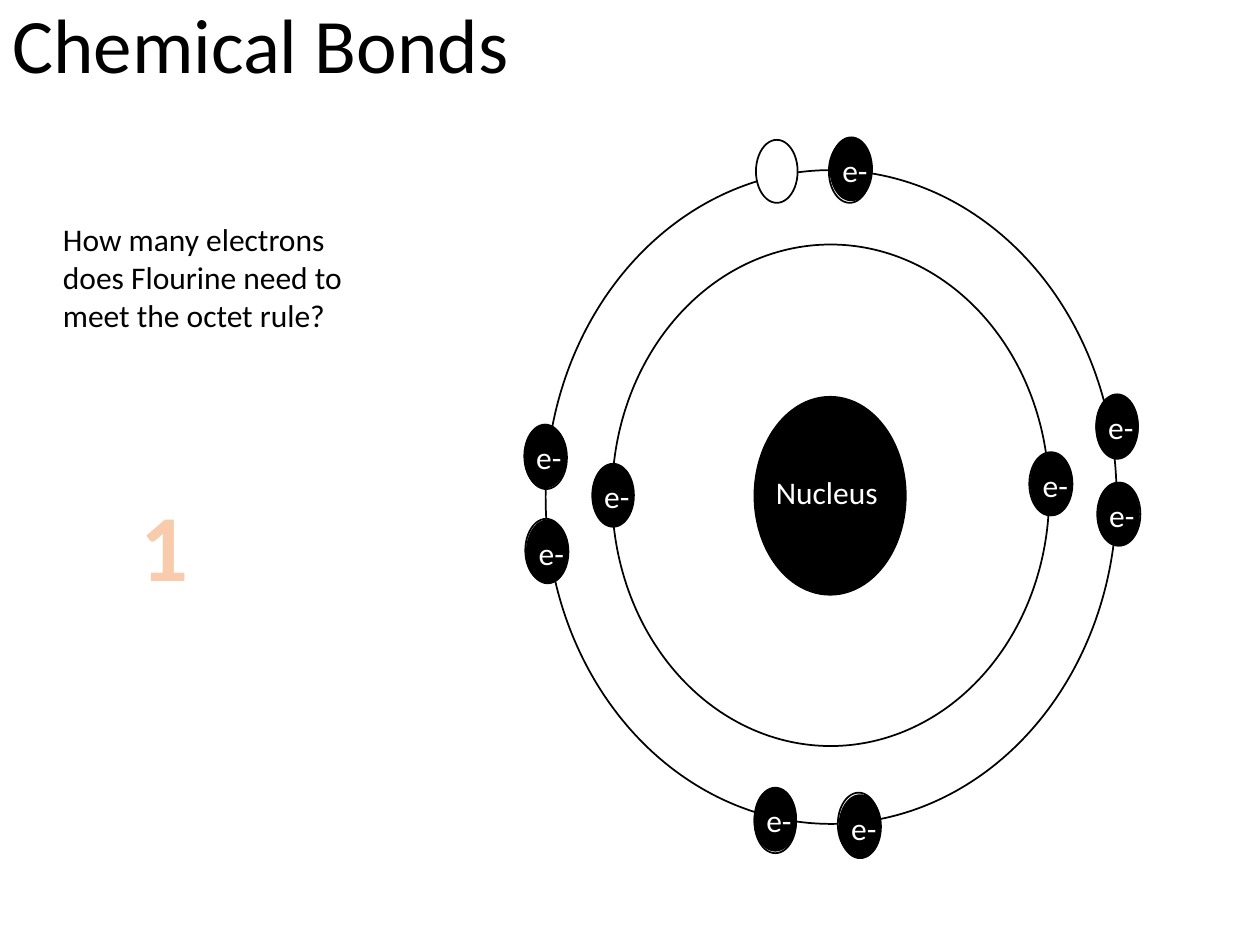
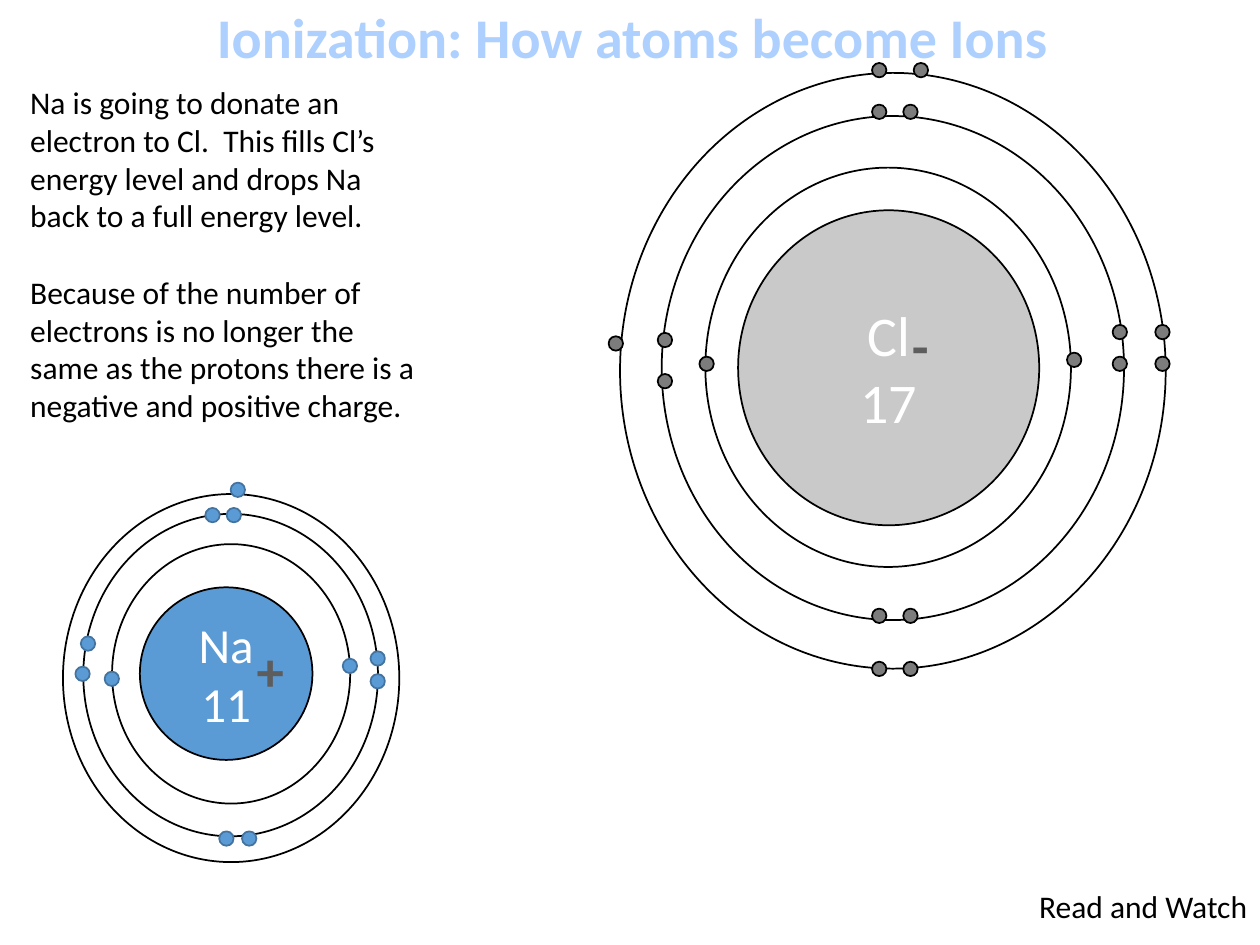
from dataclasses import dataclass

from pptx import Presentation
from pptx.dml.color import RGBColor
from pptx.enum.shapes import MSO_SHAPE
from pptx.enum.text import MSO_ANCHOR, PP_ALIGN
from pptx.util import Cm, Pt

BLACK = RGBColor(0x00, 0x00, 0x00)
WHITE = RGBColor(0xFF, 0xFF, 0xFF)
PEACH = RGBColor(0xF8, 0xCB, 0xAD)
PALE_BLUE = RGBColor(0xAD, 0xD0, 0xFF)
BLUE = RGBColor(0x5B, 0x9B, 0xD5)
DARK_BLUE = RGBColor(0x43, 0x73, 0x9E)
LIGHT_GREY = RGBColor(0xC9, 0xC9, 0xC9)
GREY = RGBColor(0x7C, 0x7C, 0x7C)
DARK_GREY = RGBColor(0x5D, 0x5D, 0x5D)

OVAL = MSO_SHAPE.OVAL
MIDDLE, TOP = MSO_ANCHOR.MIDDLE, MSO_ANCHOR.TOP
LEFT, CENTER = PP_ALIGN.LEFT, PP_ALIGN.CENTER
FONT = "Calibri"

Point = tuple[float, float]


@dataclass(frozen=True)
class Box:
    """Left, top, width and height in centimetres."""
    left: float
    top: float
    width: float
    height: float

    def lengths(self) -> list[Cm]:
        return [Cm(v) for v in (self.left, self.top, self.width, self.height)]


@dataclass(frozen=True)
class Style:
    size: int = 18
    color: RGBColor = BLACK
    bold: bool = False
    align: PP_ALIGN = LEFT
    anchor: MSO_ANCHOR = TOP
    wrap: bool = True
    line_spacing: float = 1.0
    paragraph_gap: int = 0
    baseline: int = 0


@dataclass(frozen=True)
class Ion:
    symbol: str
    protons: int
    charge: str
    text_size: int
    nucleus: Box
    nucleus_fill: RGBColor
    shells: list[Box]
    electrons: list[Point]
    electron_fill: RGBColor
    electron_line: RGBColor
    charge_box: Box


BODY = Style()
LABEL = Style(color=WHITE)
TITLE = Style(size=44, anchor=MIDDLE, line_spacing=0.9)
ANSWER = Style(size=54, color=PEACH, bold=True, align=CENTER, wrap=False)
ION_TITLE = Style(size=32, color=PALE_BLUE, bold=True, align=CENTER)
CHARGE = Style(size=54, color=DARK_GREY, bold=True, align=CENTER, baseline=-25000)

# Fluorine atom
FLUORINE_NUCLEUS = Box(15.21, 8, 3.05, 3.99)
FLUORINE_SHELLS = [Box(12.34, 4.93, 8.81, 10.11), Box(11, 3.43, 11.51, 13.18)]
ELECTRON_WIDTH, ELECTRON_HEIGHT = 0.84, 1.27
SLOTS = [(20.75, 9.12), (10.59, 8.59), (15.21, 15.93), (16.89, 15.98), (10.59, 10.46),
         (15.24, 2.82), (16.71, 2.82), (22.1, 7.98), (22.15, 9.73)]
FLUORINE_ELECTRONS = [(11.94, 9.35), (20.78, 9.12), (10.57, 8.56), (16.74, 2.77),
                      (22.1, 7.95), (16.92, 16.03), (10.62, 10.49), (15.21, 15.88),
                      (22.12, 9.73)]

# Sodium and chlorine ions
ION_ELECTRON = 0.29
SODIUM = Ion(
    "Na", 11, "+", 28, Box(2.82, 11.84, 3.48, 3.48), BLUE,
    [Box(2.26, 10.97, 4.8, 5.23), Box(1.68, 10.36, 5.94, 6.5), Box(1.27, 9.96, 6.78, 7.42)],
    [(6.91, 13.28), (2.11, 13.54),
     (4.14, 10.24), (4.57, 10.24), (7.47, 13.13), (7.47, 13.59),
     (4.88, 16.76), (4.42, 16.76), (1.63, 12.83), (1.52, 13.44),
     (4.65, 9.73)],
    BLUE, DARK_BLUE, Box(4.88, 11.43, 1.14, 1.8))
CHLORINE = Ion(
    "Cl", 17, "-", 32, Box(14.88, 4.24, 6.07, 6.35), LIGHT_GREY,
    [Box(14.22, 3.38, 7.37, 8.05), Box(13.34, 2.34, 9.32, 10.16), Box(12.5, 1.47, 11, 12.01)],
    [(14.1, 7.19), (21.51, 7.11),
     (17.58, 2.11), (18.21, 2.11), (13.26, 6.71), (13.26, 7.54),
     (17.58, 12.27), (18.21, 12.27), (22.43, 6.55), (22.43, 7.19),
     (17.58, 1.27), (18.42, 1.27), (23.29, 6.55), (23.29, 7.19),
     (18.21, 13.34), (17.58, 13.34), (12.27, 6.78)],
    GREY, BLACK, Box(17.98, 4.88, 1.14, 1.8))


def write(frame, lines: list[str], style: Style) -> None:
    frame.text = "\n".join(lines)
    frame.word_wrap = style.wrap
    frame.vertical_anchor = style.anchor
    for index, paragraph in enumerate(frame.paragraphs):
        paragraph.alignment = style.align
        paragraph.line_spacing = style.line_spacing
        if index and style.paragraph_gap:
            paragraph.space_before = Pt(style.paragraph_gap)
        for run in paragraph.runs:
            run.font.name = FONT
            run.font.size = Pt(style.size)
            run.font.bold = style.bold
            run.font.color.rgb = style.color
            if style.baseline:
                run.font._element.set("baseline", str(style.baseline))


def add_text(shapes, box: Box, lines: list[str], style: Style = BODY) -> None:
    write(shapes.add_textbox(*box.lengths()).text_frame, lines, style)


def add_oval(shapes, box: Box, fill: RGBColor | None = None, line: RGBColor = BLACK):
    oval = shapes.add_shape(OVAL, *box.lengths())
    oval.shadow.inherit = False
    if fill is None:
        oval.fill.background()
    else:
        oval.fill.solid()
        oval.fill.fore_color.rgb = fill
    oval.line.color.rgb = line
    oval.line.width = Pt(1)
    return oval


def add_labelled_electron(shapes, left: float, top: float) -> None:
    electron = shapes.add_group_shape().shapes
    add_oval(electron, Box(left, top, ELECTRON_WIDTH, ELECTRON_HEIGHT), BLACK)
    add_text(electron, Box(left - 0.01, top + 0.15, 1.45, 1.02), ["e-"], LABEL)


def add_ion(shapes, ion: Ion) -> None:
    nucleus = add_oval(shapes, ion.nucleus, ion.nucleus_fill)
    write(nucleus.text_frame, [ion.symbol, str(ion.protons)],
          Style(size=ion.text_size, color=WHITE, align=CENTER, anchor=MIDDLE))
    for shell in ion.shells:
        add_oval(shapes, shell)
    for left, top in ion.electrons:
        add_oval(shapes, Box(left, top, ION_ELECTRON, ION_ELECTRON),
                 ion.electron_fill, ion.electron_line)
    add_text(shapes, ion.charge_box, [ion.charge], CHARGE)


def build_bonds_slide(shapes) -> None:
    add_text(shapes, Box(0, -0.86, 21.89, 3.68), ["Chemical Bonds"], TITLE)
    # Nucleus and shells
    nucleus = shapes.add_group_shape().shapes
    add_oval(nucleus, FLUORINE_NUCLEUS, BLACK)
    add_text(nucleus, Box(15.39, 9.42, 2.67, 1.02), ["Nucleus"], LABEL)
    for shell in FLUORINE_SHELLS:
        add_oval(shapes, shell)
    # Electron slots, all but one filled
    for left, top in SLOTS:
        add_oval(shapes, Box(left, top, ELECTRON_WIDTH, ELECTRON_HEIGHT), WHITE)
    for left, top in FLUORINE_ELECTRONS:
        add_labelled_electron(shapes, left, top)
    # Question and answer
    add_text(shapes, Box(1.02, 4.32, 6.78, 2.57),
             ["How many electrons does Flourine need to meet the octet rule?"])
    add_text(shapes, Box(2.57, 9.7, 1.5, 2.57), ["1"], ANSWER)


def build_ionization_slide(shapes) -> None:
    for ion in (SODIUM, CHLORINE):
        add_ion(shapes, ion)
    add_text(shapes, Box(2.92, -0.08, 19.66, 1.63),
             ["Ionization: How atoms become Ions"], ION_TITLE)
    # Explanation and prompt
    add_text(shapes, Box(0.36, 1.55, 8.26, 7.95),
             ["Na is going to donate an electron to Cl.  This fills Cl’s energy level "
              "and drops Na back to a full energy level.",
              "Because of the number of electrons is no longer the same as the protons "
              "there is a negative and positive charge."],
             Style(paragraph_gap=22))
    add_text(shapes, Box(20.7, 17.75, 4.7, 1.02), ["Read and Watch"], Style(wrap=False))


def main() -> None:
    deck = Presentation()
    deck.slide_width, deck.slide_height = Cm(25.4), Cm(19.05)
    blank = deck.slide_layouts[6]
    for build in (build_bonds_slide, build_ionization_slide):
        build(deck.slides.add_slide(blank).shapes)
    deck.save("out.pptx")


if __name__ == "__main__":
    main()
